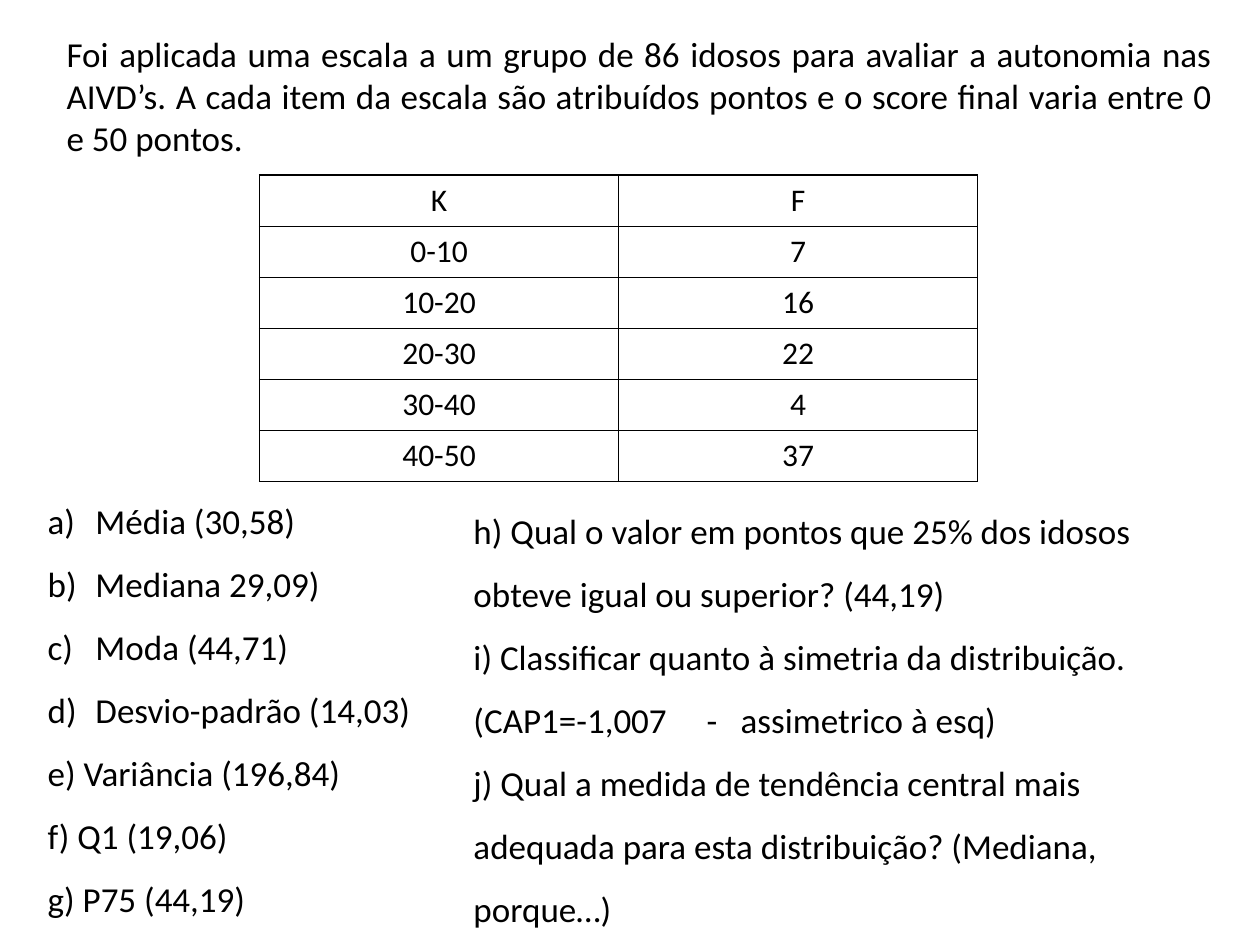
from lxml.etree import SubElement
from pptx import Presentation
from pptx.dml.color import RGBColor
from pptx.enum.text import MSO_ANCHOR, MSO_AUTO_SIZE, PP_ALIGN
from pptx.oxml.ns import qn
from pptx.util import Inches, Pt

COLORS = {"ink": "000000", "paper": "FFFFFF"}
FRAME_FORMAT = {"word_wrap": True, "auto_size": MSO_AUTO_SIZE.SHAPE_TO_FIT_TEXT,
                "vertical_anchor": MSO_ANCHOR.TOP}
PLAIN_TABLE = {"first_row": False, "horz_banding": False}
QUESTION = {"line_spacing": 1.5}
INTRO = "Foi aplicada uma escala a um grupo de 86 idosos para avaliar a autonomia nas AIVD’s. A cada item da escala são atribuídos pontos e o score final varia entre 0 e 50 pontos."
FREQUENCIES = [("K", "F"), ("0-10", "7"), ("10-20", "16"), ("20-30", "22"),
               ("30-40", "4"), ("40-50", "37")]
LETTERED = ["Média (30,58)", "Mediana 29,09)", "Moda (44,71)", "Desvio-padrão (14,03)"]
TYPED = ["e) Variância (196,84)", "f) Q1 (19,06)", "g) P75 (44,19)"]
INTERPRETATION = [
    "h) Qual o valor em pontos que 25% dos idosos obteve igual ou superior? (44,19)",
    "i) Classificar quanto à simetria da distribuição.",
    "(CAP1=-1,007\t-\tassimetrico à esq)",
    "j) Qual a medida de tendência central mais adequada para esta distribuição? (Mediana, porque…)",
]


def apply_format(target, values):
    """Set each named attribute on the target."""
    for name, value in values.items():
        setattr(target, name, value)


class ExerciseSlide:
    """Hold the style and the slide, placing elements on a 100 by 75 grid."""

    def __init__(self, deck):
        """Add a blank slide and measure its grid unit."""
        self.slide = deck.slides.add_slide(deck.slide_layouts[6])
        self.unit = deck.slide_width / 100
        self.font_format = {"name": "Calibri", "bold": False}
        fill = self.slide.background.fill
        fill.solid()
        fill.fore_color.rgb = RGBColor.from_string(COLORS["paper"])

    def place(self, *cells):
        """Turn grid counts into lengths."""
        return [round(cell * self.unit) for cell in cells]

    def add_line(self, para, text, size, **values):
        """Fill one styled paragraph."""
        apply_format(para, values)
        span = para.add_run()
        span.text = text
        apply_format(span.font, {**self.font_format, "size": Pt(size)})
        span.font.color.rgb = RGBColor.from_string(COLORS["ink"])

    def text(self, area, lines, **values):
        """Add a text box and return its paragraphs."""
        frame = self.slide.shapes.add_textbox(*self.place(*area)).text_frame
        apply_format(frame, FRAME_FORMAT)
        for index, line in enumerate(lines):
            para = frame.add_paragraph() if index else frame.paragraphs[0]
            self.add_line(para, line, 20, **values)
        return frame.paragraphs

    def letter(self, para):
        """Give a paragraph automatic lettering with a hanging indent."""
        properties = para._p.get_or_add_pPr()
        indent = Inches(0.38)
        properties.set("marL", str(indent))
        properties.set("indent", str(-indent))
        SubElement(properties, qn("a:buFont"), typeface="+mj-lt")
        SubElement(properties, qn("a:buAutoNum"), type="alphaLcParenR")

    def tabs(self, para, *stops):
        """Set left tab stops at grid distances."""
        holder = SubElement(para._p.get_or_add_pPr(), qn("a:tabLst"))
        for stop in self.place(*stops):
            SubElement(holder, qn("a:tab"), pos=str(stop), algn="l")

    def border(self, cell):
        """Rule all four sides of a table cell."""
        properties = cell._tc.get_or_add_tcPr()
        for side in ("lnL", "lnR", "lnT", "lnB"):
            line = SubElement(properties, qn(f"a:{side}"), w=str(Pt(1)))
            fill = SubElement(line, qn("a:solidFill"))
            SubElement(fill, qn("a:srgbClr"), val=COLORS["ink"])

    def table(self, area, rows):
        """Add a plain ruled table with centred text."""
        grid = self.slide.shapes.add_table(len(rows), len(rows[0]), *self.place(*area)).table
        apply_format(grid, PLAIN_TABLE)
        for row, values in enumerate(rows):
            for column, value in enumerate(values):
                cell = grid.cell(row, column)
                self.border(cell)
                cell.fill.background()
                self.add_line(cell.text_frame.paragraphs[0], value, 18, alignment=PP_ALIGN.CENTER)


def main():
    """Build and save the exercise slide."""
    deck = Presentation()
    apply_format(deck, {"slide_width": Inches(10), "slide_height": Inches(7.5)})
    page = ExerciseSlide(deck)
    page.table((20.6, 13.9, 57, 24.3), FREQUENCIES)
    measures = page.text((2.8, 37.5, 41.3, 36.4), LETTERED + TYPED, **QUESTION)
    for para in measures[:len(LETTERED)]:
        page.letter(para)
    page.text((4.3, 2.1, 92.9, 11.1), [INTRO], alignment=PP_ALIGN.JUSTIFY)
    answers = page.text((36.6, 38.3, 58.3, 36.4), INTERPRETATION, **QUESTION)
    page.tabs(answers[2], 18.5, 21.2)
    deck.save("out.pptx")


if __name__ == "__main__":
    main()
